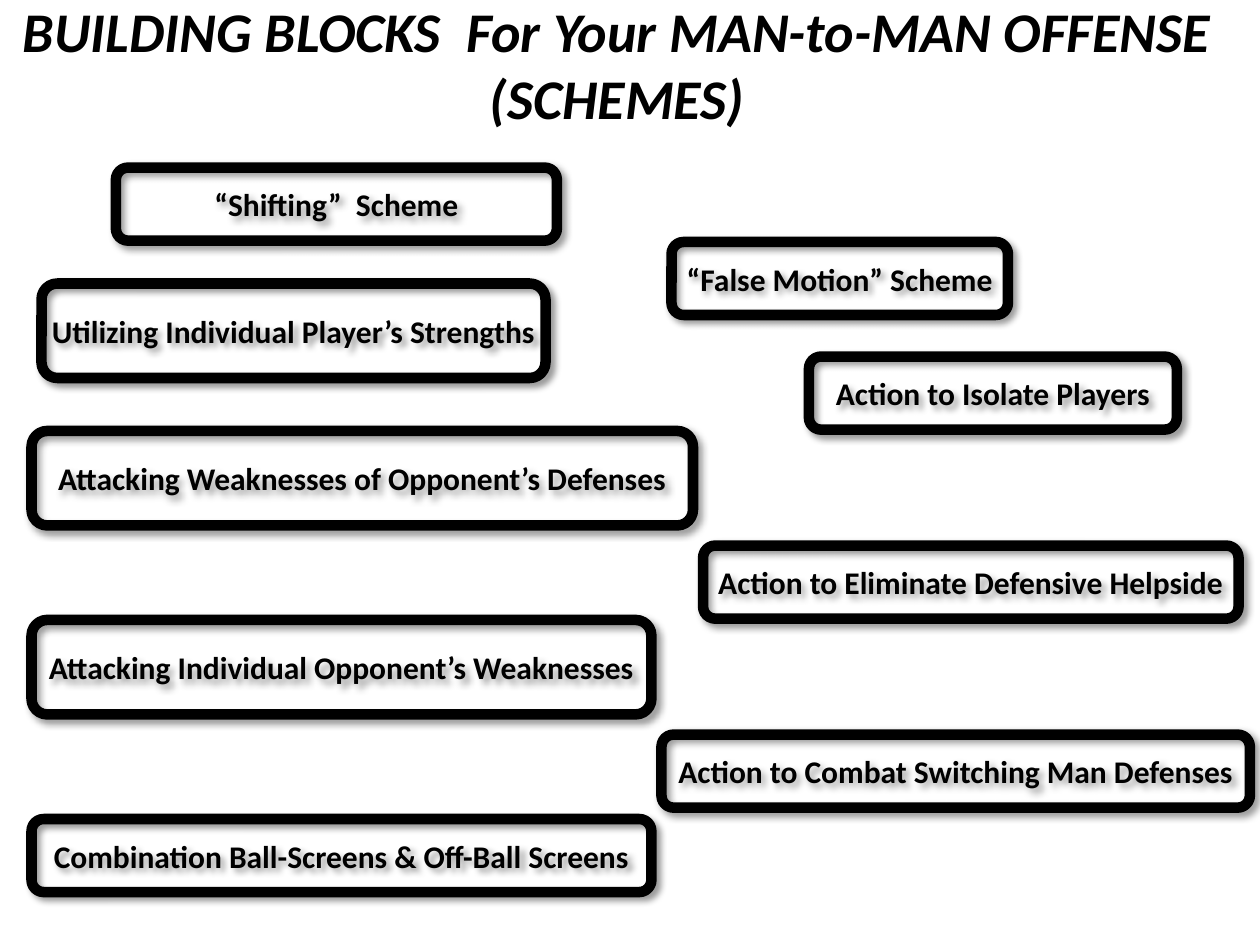
from lxml import etree
from pptx import Presentation
from pptx.dml.color import RGBColor
from pptx.enum.shapes import MSO_SHAPE
from pptx.enum.text import MSO_ANCHOR, MSO_AUTO_SIZE, PP_ALIGN
from pptx.oxml.ns import qn
from pptx.util import Inches, Pt

BOX_SHAPE = MSO_SHAPE.FLOWCHART_ALTERNATE_PROCESS
CENTER = PP_ALIGN.CENTER
TOP, MIDDLE = MSO_ANCHOR.TOP, MSO_ANCHOR.MIDDLE
GROW = MSO_AUTO_SIZE.SHAPE_TO_FIT_TEXT

FONT = "Calibri"
COLORS = {"ink": "000000", "background": "FFFFFF"}
TITLE_LINES = ["BUILDING BLOCKS  For Your MAN-to-MAN OFFENSE  ", "(SCHEMES)  "]
LOW, TALL = 0.58, 0.75
SCHEMES = [
    ("“Shifting”  Scheme", 0.92, 1.33, 3.5, LOW),
    ("Utilizing Individual Player’s Strengths", 0.33, 2.25, 4, TALL),
    ("Action to Isolate Players", 6.42, 2.83, 2.92, LOW),
    ("Combination Ball-Screens & Off-Ball Screens", 0.25, 6.5, 4.92, LOW),
    ("Action to Eliminate Defensive Helpside", 5.58, 4.33, 4.25, LOW),
    ("“False Motion” Scheme", 5.33, 1.92, 2.67, LOW),
    ("Action to Combat Switching Man Defenses", 5.25, 5.83, 4.67, LOW),
    ("Attacking Individual Opponent’s Weaknesses", 0.25, 4.92, 4.92, TALL),
    ("Attacking Weaknesses of Opponent’s Defenses", 0.25, 3.42, 5.25, TALL),
]


def color(name):
    return RGBColor.from_string(COLORS[name])


def style_paragraph(paragraph, size, italic=False):
    paragraph.alignment = CENTER
    paragraph.font.name = FONT
    paragraph.font.size = Pt(size)
    paragraph.font.bold = True
    paragraph.font.italic = italic
    paragraph.font.color.rgb = color("ink")


def add_shadow(shape):
    shape.shadow.inherit = False
    effects = shape._element.spPr.find(qn("a:effectLst"))
    shadow = etree.SubElement(
        effects, qn("a:outerShdw"), blurRad=str(Pt(4)), dist=str(Pt(3)),
        dir=str(45 * 60000), algn="tl", rotWithShape="0")
    shade = etree.SubElement(shadow, qn("a:srgbClr"), val=COLORS["ink"])
    etree.SubElement(shade, qn("a:alpha"), val="40000")


def add_title(slide):
    title = slide.shapes.title
    title.left, title.top = Inches(0), Inches(-0.08)
    title.width, title.height = Inches(10), Inches(1.18)
    frame = title.text_frame
    frame.text = "\n".join(TITLE_LINES)
    frame.word_wrap = True
    frame.auto_size = GROW
    frame.vertical_anchor = TOP
    for paragraph in frame.paragraphs:
        style_paragraph(paragraph, 32, italic=True)


def add_scheme(slide, text, *place):
    shape = slide.shapes.add_shape(BOX_SHAPE, *map(Inches, place))
    shape.fill.background()
    shape.line.color.rgb = color("ink")
    shape.line.width = Pt(6)
    add_shadow(shape)
    frame = shape.text_frame
    frame.text = text
    frame.word_wrap = False
    frame.vertical_anchor = MIDDLE
    style_paragraph(frame.paragraphs[0], 18)


def main():
    presentation = Presentation()
    presentation.slide_width = Inches(10)
    presentation.slide_height = Inches(7.5)
    slide = presentation.slides.add_slide(presentation.slide_layouts[5])
    slide.background.fill.solid()
    slide.background.fill.fore_color.rgb = color("background")
    add_title(slide)
    for scheme in SCHEMES:
        add_scheme(slide, *scheme)
    presentation.save("out.pptx")


if __name__ == "__main__":
    main()
